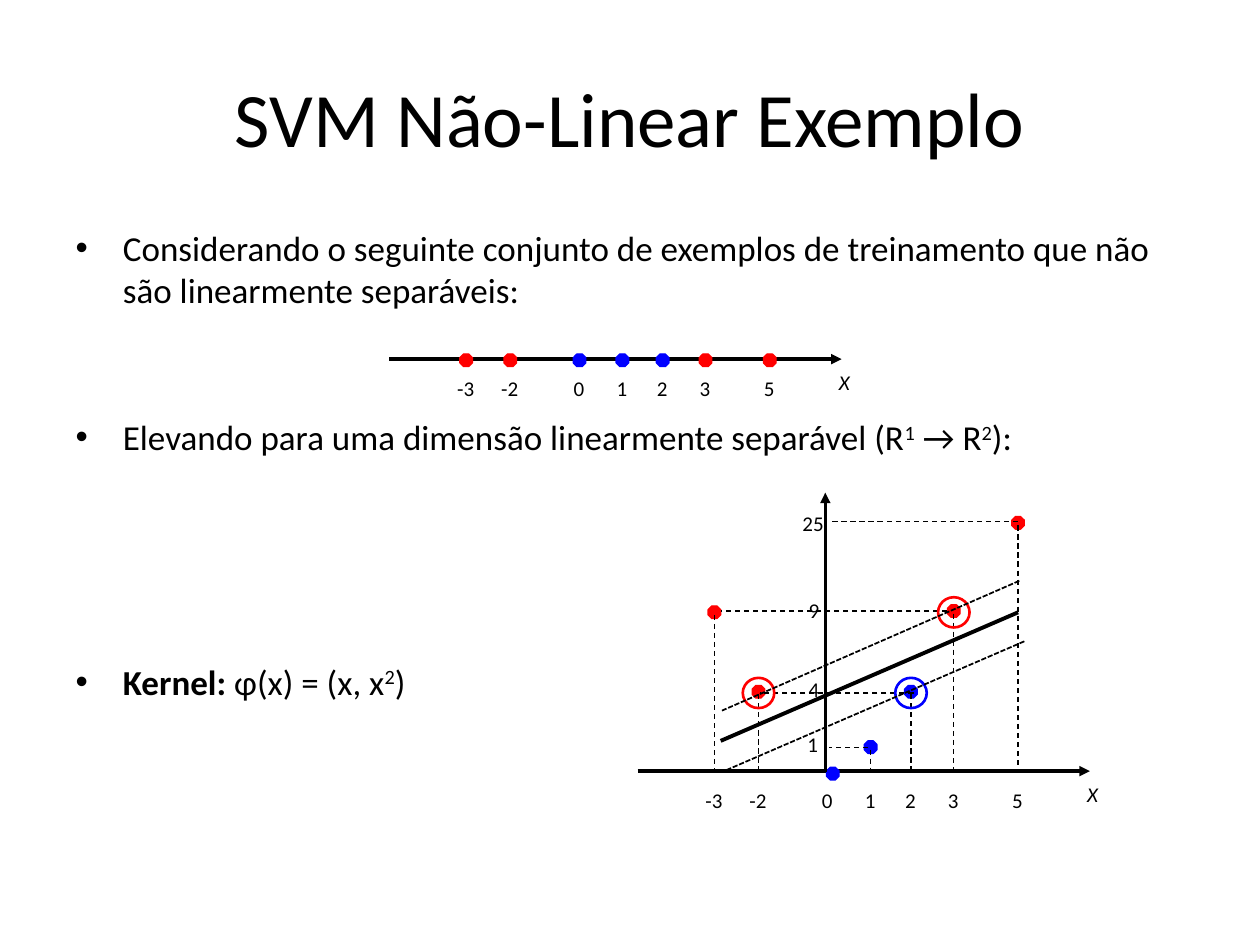
from pptx import Presentation
from pptx.dml.color import RGBColor
from pptx.enum.dml import MSO_LINE
from pptx.enum.shapes import MSO_CONNECTOR, MSO_SHAPE
from pptx.enum.text import MSO_ANCHOR, MSO_AUTO_SIZE, PP_ALIGN
from pptx.oxml.ns import qn
from pptx.util import Inches, Pt
from lxml import etree

BLACK = RGBColor(0x00, 0x00, 0x00)
RED = RGBColor(0xFF, 0x00, 0x00)
BLUE = RGBColor(0x00, 0x00, 0xFF)
FONT = "Calibri"
STRAIGHT = MSO_CONNECTOR.STRAIGHT
OCTAGON = MSO_SHAPE.OCTAGON
OVAL = MSO_SHAPE.OVAL
DASH = MSO_LINE.DASH
SYS_DASH = MSO_LINE.SQUARE_DOT

CLASS_COLORS = {-3: RED, -2: RED, 0: BLUE, 1: BLUE, 2: BLUE, 3: RED, 5: RED}
AXIS_OFFSETS = {-3: 0.61, -2: 0.96, 0: 1.51, 1: 1.85, 2: 2.17, 3: 2.51, 5: 3.02}
AXIS_LENGTH = 3.59
PLANE_POINTS = {-3: (5.67, 4.86), -2: (6.02, 5.49), 0: (6.61, 6.14), 1: (6.91, 5.93),
                2: (7.23, 5.49), 3: (7.57, 4.85), 5: (8.08, 4.15)}
SUPPORT_VECTORS = (-2, 3, 2)
SQUARE_LABELS = (("1", 6.31, 5.76, 0.29), ("4", 6.32, 5.32, 0.29),
                 ("9", 6.32, 4.69, 0.29), ("25", 6.27, 4, 0.37))
SQUARE_GUIDES = ((7.52, 5.72, 4.85), (7.25, 6.03, 5.5), (8.08, 6.58, 4.14), (6.89, 6.58, 5.93))

BULLETS = (
    (0, (("Considerando o seguinte conjunto de exemplos de treinamento que não "
          "são linearmente separáveis:", ""),)),
    (60, (("Elevando para uma dimensão linearmente separável (R", ""), ("1", "sup"),
          (" → R", ""), ("2", "sup"), ("):", ""))),
    (115.5, (("Kernel: ", "bold"), ("φ(x) = (x, x", ""), ("2", "sup"), (")", ""))),
)


def add_run(p, text, size, italic=False, style=""):
    r = p.add_run()
    r.text = text
    r.font.name = FONT
    r.font.size = Pt(size)
    r.font.color.rgb = BLACK
    if italic:
        r.font.italic = True
    if style == "bold":
        r.font.bold = True
    if style == "sup":
        r.font._element.set("baseline", "30000")


def place(sp, left, top, width, height):
    sp.left, sp.top = Inches(left), Inches(top)
    sp.width, sp.height = Inches(width), Inches(height)


def fill_title(sp):
    place(sp, 0.5, 0.3, 9, 1.25)
    tf = sp.text_frame
    tf.vertical_anchor = MSO_ANCHOR.MIDDLE
    p = tf.paragraphs[0]
    p.alignment = PP_ALIGN.CENTER
    add_run(p, "SVM Não-Linear Exemplo", 44)


def fill_body(sp):
    place(sp, 0.5, 1.75, 9, 4.95)
    tf = sp.text_frame
    for i, (gap, runs) in enumerate(BULLETS):
        p = tf.add_paragraph() if i else tf.paragraphs[0]
        p.space_before = Pt(gap)
        for text, style in runs:
            add_run(p, text, 20, style=style)


def add_line(shapes, x1, y1, x2, y2, width, dash=None, arrow=False):
    line = shapes.add_connector(STRAIGHT, Inches(x1), Inches(y1), Inches(x2), Inches(y2))
    line.line.color.rgb = BLACK
    line.line.width = Pt(width)
    if dash is not None:
        line.line.dash_style = dash
    if arrow:
        etree.SubElement(line.line._get_or_add_ln(), qn("a:tailEnd"), type="triangle")
    etree.SubElement(line._element.spPr, qn("a:effectLst"))


def add_outline(shapes, kind, cx, cy, width, height, color, weight):
    sp = shapes.add_shape(kind, Inches(cx - width / 2), Inches(cy - height / 2),
                          Inches(width), Inches(height))
    sp.shadow.inherit = False
    sp.fill.background()
    sp.line.color.rgb = color
    sp.line.width = Pt(weight)
    return sp


def add_marker(shapes, cx, cy, color):
    sp = add_outline(shapes, OCTAGON, cx, cy, 0.1, 0.1, color, 0.75)
    sp.fill.solid()
    sp.fill.fore_color.rgb = color


def add_label(shapes, text, left, top, width, italic=False):
    tb = shapes.add_textbox(Inches(left), Inches(top), Inches(width), Inches(0.3))
    tf = tb.text_frame
    tf.word_wrap = False
    tf.auto_size = MSO_AUTO_SIZE.SHAPE_TO_FIT_TEXT
    add_run(tf.paragraphs[0], text, 12, italic)


def add_x_axis(shapes, left, y, points):
    add_line(shapes, left, y, left + AXIS_LENGTH, y, 2, arrow=True)
    for x, (cx, cy) in points.items():
        add_marker(shapes, cx, cy, CLASS_COLORS[x])
    for x, offset in AXIS_OFFSETS.items():
        width = 0.34 if x < 0 else 0.29
        add_label(shapes, str(x), left + offset - width / 2, y + 0.08, width)
    add_label(shapes, "X", left + 3.47, y + 0.03, 0.29, italic=True)


def add_number_line(shapes):
    left, y = 3.09, 2.85
    points = {x: (left + offset, y + 0.01) for x, offset in AXIS_OFFSETS.items()}
    add_x_axis(shapes, left, y, points)


def add_plane(shapes):
    axis_y = 6.12
    add_x_axis(shapes, 5.06, axis_y, PLANE_POINTS)
    add_line(shapes, 6.55, 6.13, 6.55, 3.91, 2, arrow=True)
    for text, left, top, width in SQUARE_LABELS:
        add_label(shapes, text, left, top, width)
    for x, (cx, cy) in PLANE_POINTS.items():
        if x != 0:
            add_line(shapes, cx, cy + 0.02, cx, axis_y, 0.75, DASH)
    for x1, x2, y in SQUARE_GUIDES:
        add_line(shapes, x1, y, x2, y, 0.75, DASH)
    for x in SUPPORT_VECTORS:
        cx, cy = PLANE_POINTS[x]
        add_outline(shapes, OVAL, cx, cy + 0.01, 0.25, 0.24, CLASS_COLORS[x], 1.5)
    add_line(shapes, 8.09, 4.61, 5.73, 5.64, 1, SYS_DASH)
    add_line(shapes, 8.13, 5.09, 5.77, 6.11, 1, SYS_DASH)
    add_line(shapes, 8.08, 4.86, 5.72, 5.88, 2.25)


def main():
    prs = Presentation()
    prs.slide_width, prs.slide_height = Inches(10), Inches(7.5)
    s = prs.slides.add_slide(prs.slide_layouts[1])
    fill_title(s.shapes.title)
    fill_body(s.placeholders[1])
    add_number_line(s.shapes.add_group_shape().shapes)
    add_plane(s.shapes)
    prs.save("out.pptx")


if __name__ == "__main__":
    main()
